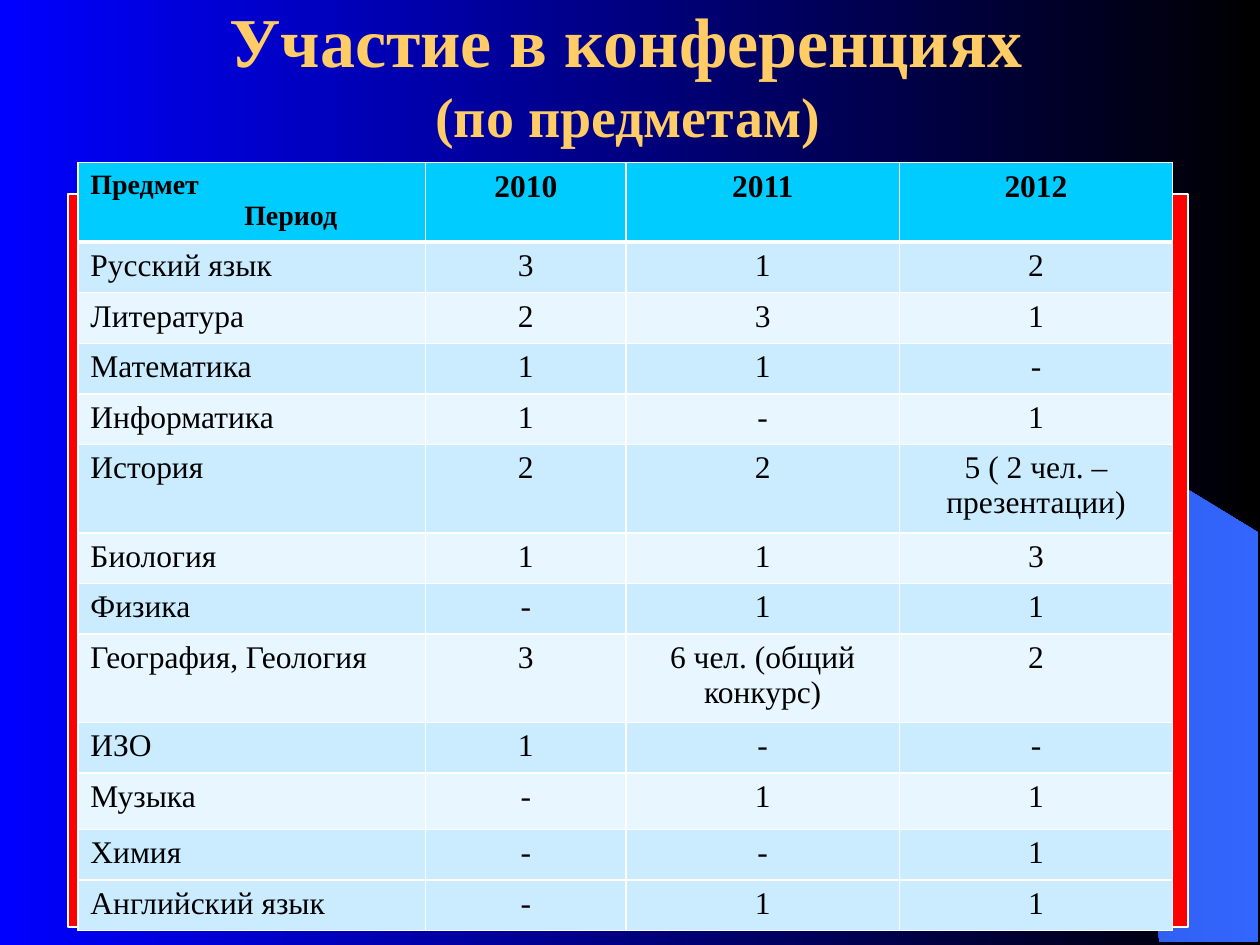
from lxml import etree
from pptx import Presentation
from pptx.dml.color import RGBColor
from pptx.enum.shapes import MSO_SHAPE
from pptx.enum.text import MSO_ANCHOR, MSO_AUTO_SIZE, PP_ALIGN
from pptx.oxml.ns import qn
from pptx.util import Cm, Pt

RECT = MSO_SHAPE.RECTANGLE
TOP = MSO_ANCHOR.TOP
FIXED = MSO_AUTO_SIZE.NONE
LEFT, MID = PP_ALIGN.LEFT, PP_ALIGN.CENTER
FONT = "Times New Roman"
COLORS = {
    "blue": "0000FF", "black": "000000", "deep": "2449B6", "sky": "3366FF",
    "red": "FF0000", "white": "FFFFFF", "gold": "FFCC66",
    "head": "00CCFF", "odd": "CBECFF", "even": "E7F6FF",
}
WEDGE = [
    (8.41, 14.6), (10.41, 14.6), (10.41, 6.35), (0, 0), (0.89, 0.66),
    (1.63, 1.24), (2.44, 1.96), (3.23, 2.72), (4.39, 3.99), (5.44, 5.36),
    (6.17, 6.55), (6.83, 7.77), (7.34, 9.02), (7.72, 10.13), (7.98, 11.07),
    (8.23, 12.27), (8.33, 13.28),
]
TITLE = [("Участие в конференциях ", 40), ("(по предметам) ", 32)]
ROWS = [
    ("Предмет\nПериод", "2010", "2011", "2012"),
    ("Русский язык", "3", "1", "2"),
    ("Литература", "2", "3", "1"),
    ("Математика", "1", "1", "-"),
    ("Информатика", "1", "-", "1"),
    ("История", "2", "2", "5 ( 2 чел. – презентации)"),
    ("Биология", "1", "1", "3"),
    ("Физика", "-", "1", "1"),
    ("География, Геология", "3", "6 чел. (общий конкурс)", "2"),
    ("ИЗО", "1", "-", "-"),
    ("Музыка", "-", "1", "1"),
    ("Химия", "-", "-", "1"),
    ("Английский язык", "-", "1", "1"),
]
WIDTHS = [7.01, 4.04, 5.51, 5.51]
ROW = 1.02
TALL = {0: 1.6, 5: 1.78, 8: 1.78, 10: 1.14}


def color(name):
    """Return the named colour."""
    return RGBColor.from_string(COLORS[name])


def blend(fill, start, end):
    """Fill from left to right between two named colours."""
    fill.gradient()
    fill.gradient_angle = 0
    for stop, name in zip(fill.gradient_stops, (start, end)):
        stop.color.rgb = color(name)


def style(para, size, name, bold, align):
    """Format a paragraph and its runs."""
    para.alignment = align
    for run in para.runs:
        run.font.name = FONT
        run.font.size = Pt(size)
        run.font.bold = bold
        run.font.color.rgb = color(name)


def add_wedge(slide, left, top):
    """Draw the curved wedge at the right edge."""
    points = [(Cm(x), Cm(y)) for x, y in WEDGE]
    pen = slide.shapes.build_freeform(*points[0])
    pen.add_line_segments(points[1:], close=True)
    wedge = pen.convert_to_shape(Cm(left), Cm(top))
    wedge.shadow.inherit = False
    blend(wedge.fill, "deep", "sky")
    wedge.line.fill.background()


def add_panel(slide, left, top, width, height):
    """Draw the red panel behind the table."""
    panel = slide.shapes.add_shape(RECT, Cm(left), Cm(top), Cm(width), Cm(height))
    panel.shadow.inherit = False
    panel.fill.solid()
    panel.fill.fore_color.rgb = color("red")
    panel.line.color.rgb = color("white")
    panel.line.width = Pt(0.75)


def add_title(slide, left, top, width, height):
    """Place and format the two-line title."""
    title = slide.shapes.title
    title.left, title.top = Cm(left), Cm(top)
    title.width, title.height = Cm(width), Cm(height)
    frame = title.text_frame
    frame.text = "\n".join(text for text, size in TITLE)
    frame.word_wrap = True
    frame.auto_size = FIXED
    frame.vertical_anchor = TOP
    for para, (text, size) in zip(frame.paragraphs, TITLE):
        style(para, size, "gold", True, MID)


def add_edge(cell, side, width):
    """Add a white border to one side of a cell."""
    props = cell._tc.get_or_add_tcPr()
    line = etree.SubElement(props, qn("a:ln" + side), w=str(Pt(width)))
    fill = etree.SubElement(line, qn("a:solidFill"))
    etree.SubElement(fill, qn("a:srgbClr"), val=COLORS["white"])


def fill_cell(cell, text, row, col):
    """Write and format one table cell."""
    cell.text_frame.text = text
    size = 16 if row == col == 0 else 18
    for para in cell.text_frame.paragraphs:
        style(para, size, "black", row == 0, MID if col else LEFT)
    for side in "LRTB":
        thick = (row, side) in ((0, "B"), (1, "T"))
        add_edge(cell, side, 3 if thick else 1)
    band = "odd" if row % 2 or row == len(ROWS) - 1 else "even"
    cell.fill.solid()
    cell.fill.fore_color.rgb = color(band if row else "head")


def add_grid(slide, left, top):
    """Build the table of subjects by year."""
    highs = [TALL.get(row, ROW) for row in range(len(ROWS))]
    table = slide.shapes.add_table(
        len(ROWS), len(WIDTHS), Cm(left), Cm(top), Cm(sum(WIDTHS)), Cm(sum(highs))
    ).table
    for col, width in zip(table.columns, WIDTHS):
        col.width = Cm(width)
    for row, high in zip(table.rows, highs):
        row.height = Cm(high)
    for row, texts in enumerate(ROWS):
        for col, text in enumerate(texts):
            fill_cell(table.cell(row, col), text, row, col)
    period = table.cell(0, 0).text_frame.paragraphs[1]
    period._p.get_or_add_pPr().set("marL", str(Cm(3.1)))


def main():
    """Build and save the slide."""
    deck = Presentation()
    deck.slide_width, deck.slide_height = Cm(25.4), Cm(19.05)
    slide = deck.slides.add_slide(deck.slide_layouts[5])
    blend(slide.background.fill, "blue", "black")
    add_wedge(slide, 14.96, 4.39)
    add_panel(slide, 1.37, 3.91, 22.58, 14.78)
    add_title(slide, 2.51, -0.18, 20.57, 3.3)
    add_grid(slide, 1.57, 3.28)
    deck.save("out.pptx")


if __name__ == "__main__":
    main()
